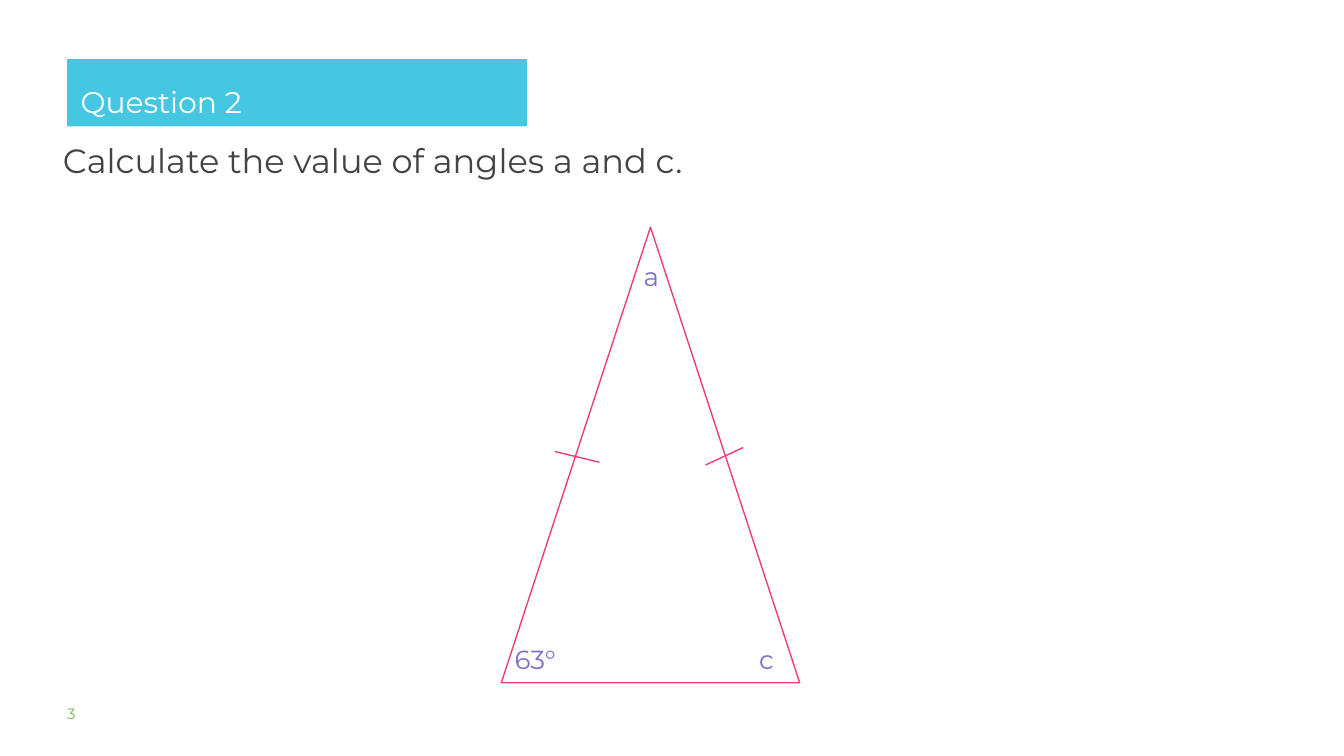
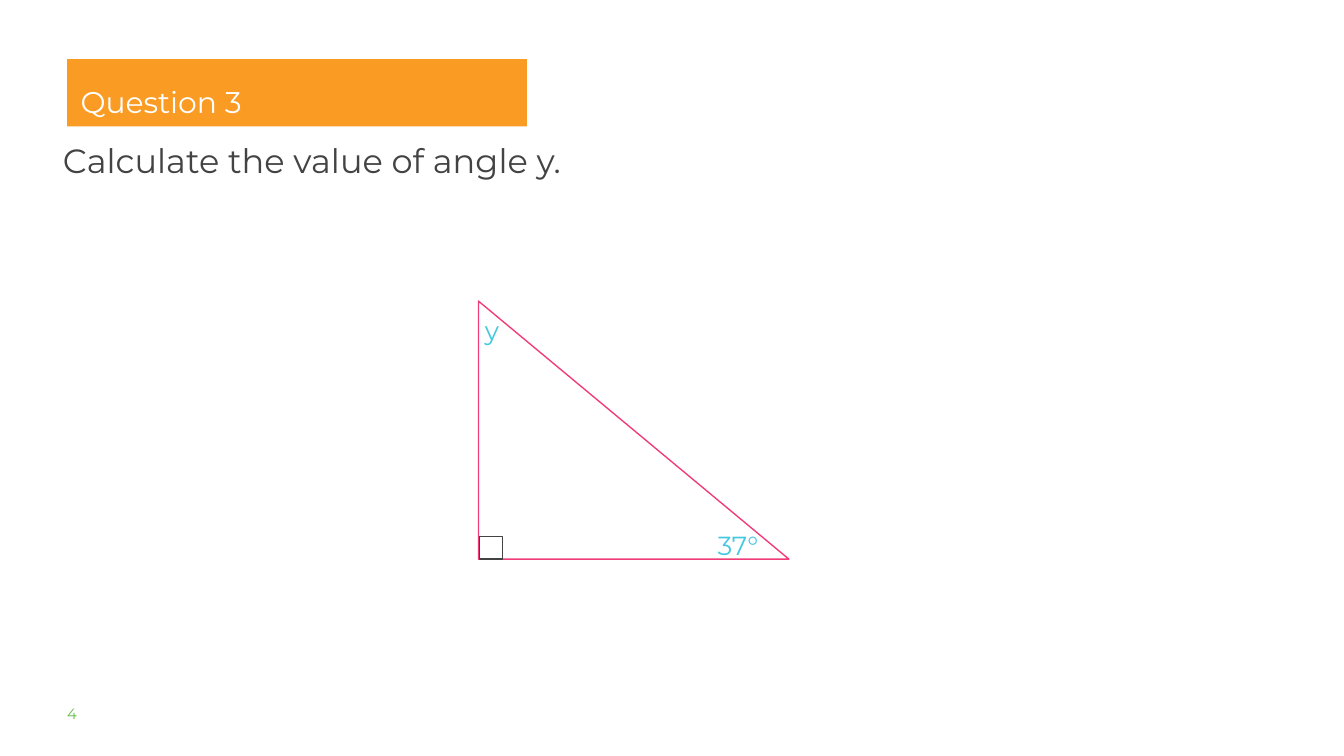
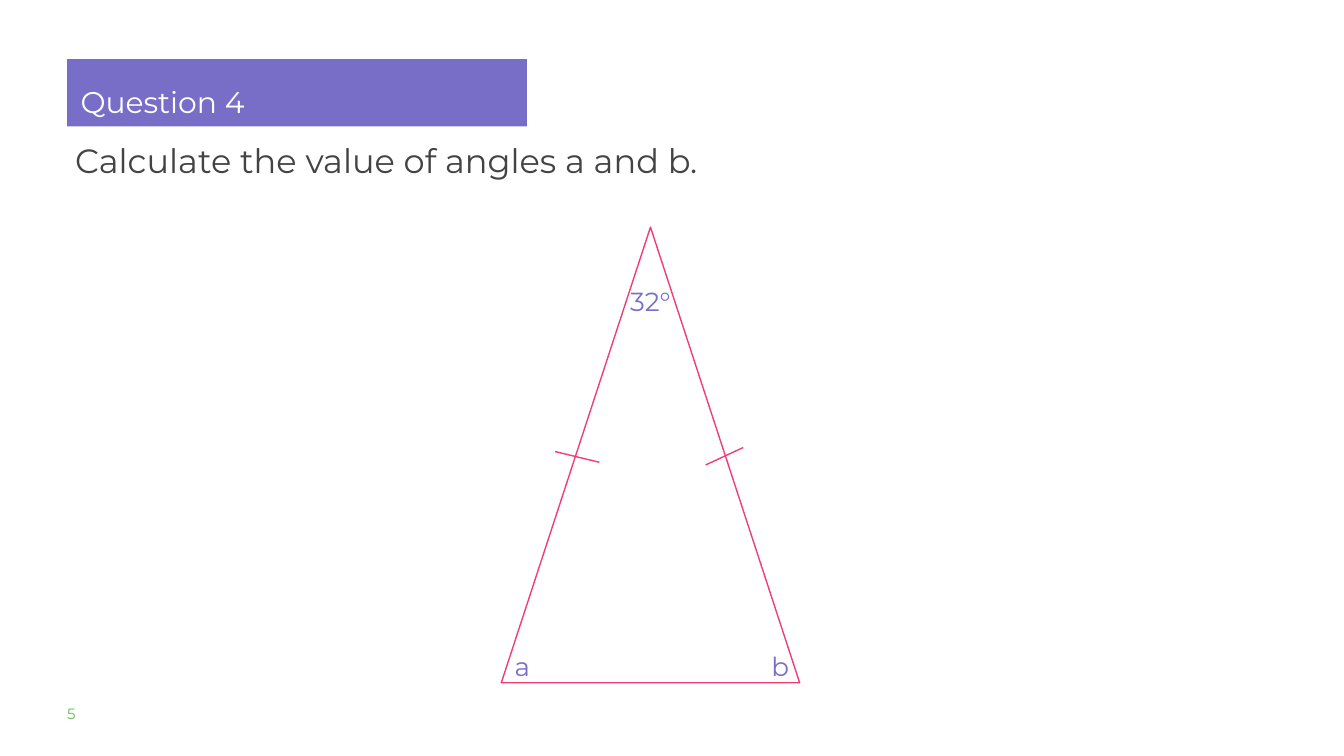
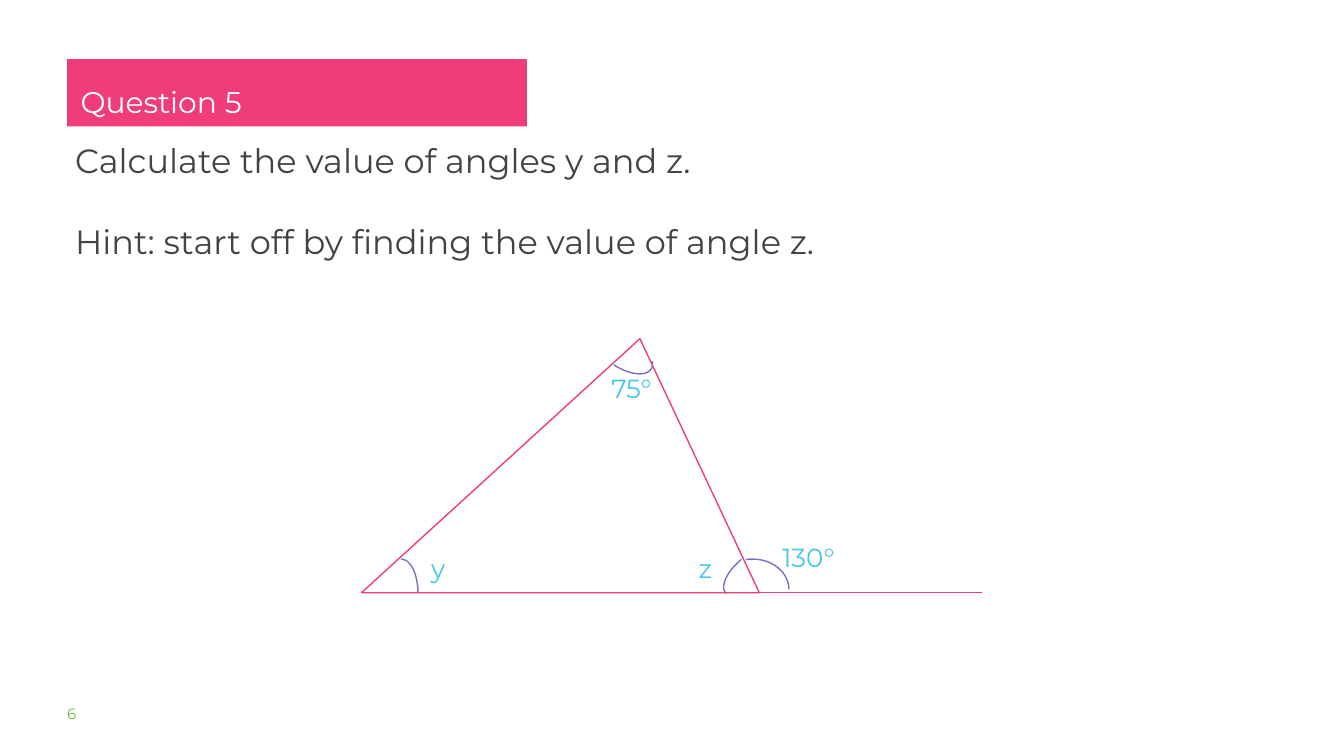
from lxml import etree
from pptx import Presentation
from pptx.dml.color import RGBColor
from pptx.enum.shapes import MSO_CONNECTOR as Link, MSO_SHAPE as Kind
from pptx.enum.text import MSO_ANCHOR as Anchor, MSO_AUTO_SIZE as Fit, PP_ALIGN as Align
from pptx.oxml.ns import qn
from pptx.util import Inches, Pt

CELL = Inches(0.1)  # the slide is a grid of 100 columns by 56.25 rows
FONT = "Montserrat"
WHITE, DARK, GREEN = "FFFFFF", "434343", "65BE4B"
BLUE, ORANGE, VIOLET, PINK = "46C7E1", "FA9B23", "786EC8", "F03C78"
BAND = (5, 4.4, 34.2, 5)
FOOT = (5, 52.4, 7.9, 2)


def hue(code):
    return RGBColor.from_string(code)


def write(shape, text, size, color, inset=1):
    """Fill a shape with left-aligned text that starts at its top."""
    frame = shape.text_frame
    frame.text = text
    frame.word_wrap = True
    frame.auto_size = Fit.NONE
    frame.vertical_anchor = Anchor.TOP
    frame.margin_left = frame.margin_right = int(inset * CELL)
    frame.margin_top = frame.margin_bottom = int(inset * CELL)
    for row, para in enumerate(frame.paragraphs):
        para.alignment = Align.LEFT
        if row:
            para.space_before = Pt(22)
        for run in para.runs:
            run.font.name = FONT
            run.font.size = Pt(size)
            run.font.color.rgb = hue(color)


# Outlines: kind, box, line colour, turn, adjustments
tall = [(Kind.ISOSCELES_TRIANGLE, (37.3, 16.9, 22.2, 33.9), PINK, 0, [0.5])]
right = [
    (Kind.RIGHT_TRIANGLE, (35.6, 22.4, 23.1, 19.2), PINK, 0, []),
    (Kind.RECTANGLE, (35.7, 39.9, 1.7, 1.7), DARK, 0, []),
]
wide = [
    (Kind.ISOSCELES_TRIANGLE, (26.9, 25.2, 29.6, 18.9), PINK, 0, [0.7]),
    (Kind.ARC, (28.6, 41.6, 2.5, 5), VIOLET, 0, [162, 0]),
    (Kind.ARC, (45.1, 23.6, 2.5, 5), VIOLET, 123.1, [153.8, 0]),
    (Kind.ARC, (53.3, 41.6, 5.4, 4.5), VIOLET, 0, [154.6, 0]),
    (Kind.ARC, (54.7, 40.1, 2.5, 5), VIOLET, 231.4, [162, 0]),
]
ticks = [(55.3, 33.3, 52.5, 34.6), (44.6, 34.4, 41.3, 33.6)]
base = [(56.5, 44.1, 73.1, 44.1)]

# Band colour, task, its left edge, outlines, lines, label colour, labels
pages = [
    (BLUE, "Calculate the value of angles a and c.", 3.7, tall, ticks, VIOLET,
     [("63°", 37.3, 46.9), ("c", 55.5, 46.9), ("a", 46.9, 18.4)]),
    (ORANGE, "Calculate the value of angle y.", 3.7, right, [], BLUE,
     [("37°", 52.4, 38.4), ("y", 35.1, 22.4)]),
    (VIOLET, "Calculate the value of angles a and b.", 4.6, tall, ticks, VIOLET,
     [("32°", 45.9, 20.2), ("b", 56.4, 47.4), ("a", 37.3, 47.4)]),
    (PINK, "Calculate the value of angles y and z.\n"
     "Hint: start off by finding the value of angle z.", 4.6, wide, base, BLUE,
     [("75°", 44.5, 26.7), ("130°", 57.2, 39.3), ("y", 31.1, 40.1), ("z", 51, 40.1)]),
]

deck = Presentation()
deck.slide_width = 100 * CELL
deck.slide_height = int(56.25 * CELL)

for count, (band, task, left, shapes, lines, tint, labels) in enumerate(pages, 2):
    slide = deck.slides.add_slide(deck.slide_layouts[5])
    title = slide.shapes.title
    title.left, title.top, title.width, title.height = [int(v * CELL) for v in BAND]
    title.fill.solid()
    title.fill.fore_color.rgb = hue(band)
    write(title, f"Question {count}", 16, WHITE)
    title.text_frame.paragraphs[0].line_spacing = 1.3

    for kind, box, color, turn, bends in shapes:
        shape = slide.shapes.add_shape(kind, *[int(v * CELL) for v in box])
        shape.shadow.inherit = False
        shape.rotation = turn
        for spot, bend in enumerate(bends):
            shape.adjustments[spot] = bend
        if kind == Kind.ARC:
            shape.fill.background()
        else:
            shape.fill.solid()
            shape.fill.fore_color.rgb = hue(WHITE)
        shape.line.color.rgb = hue(color)
        shape.line.width = Pt(0.75)

    for ends in lines:
        line = slide.shapes.add_connector(Link.STRAIGHT, *[int(v * CELL) for v in ends])
        line.line.color.rgb = hue(PINK)
        line.line.width = Pt(0.75)
        etree.SubElement(line.element.spPr, qn("a:effectLst"))

    texts = [(label, (x, y, 7.2, 3.9), 14, tint, 1) for label, x, y in labels]
    texts.append((task, (left, 9.4, 72.5, 5.7), 18, DARK, 1))
    texts.append((str(count + 1), FOOT, 8, GREEN, 0))
    for text, box, size, color, inset in texts:
        area = slide.shapes.add_textbox(*[int(v * CELL) for v in box])
        write(area, text, size, color, inset)

deck.save("out.pptx")
